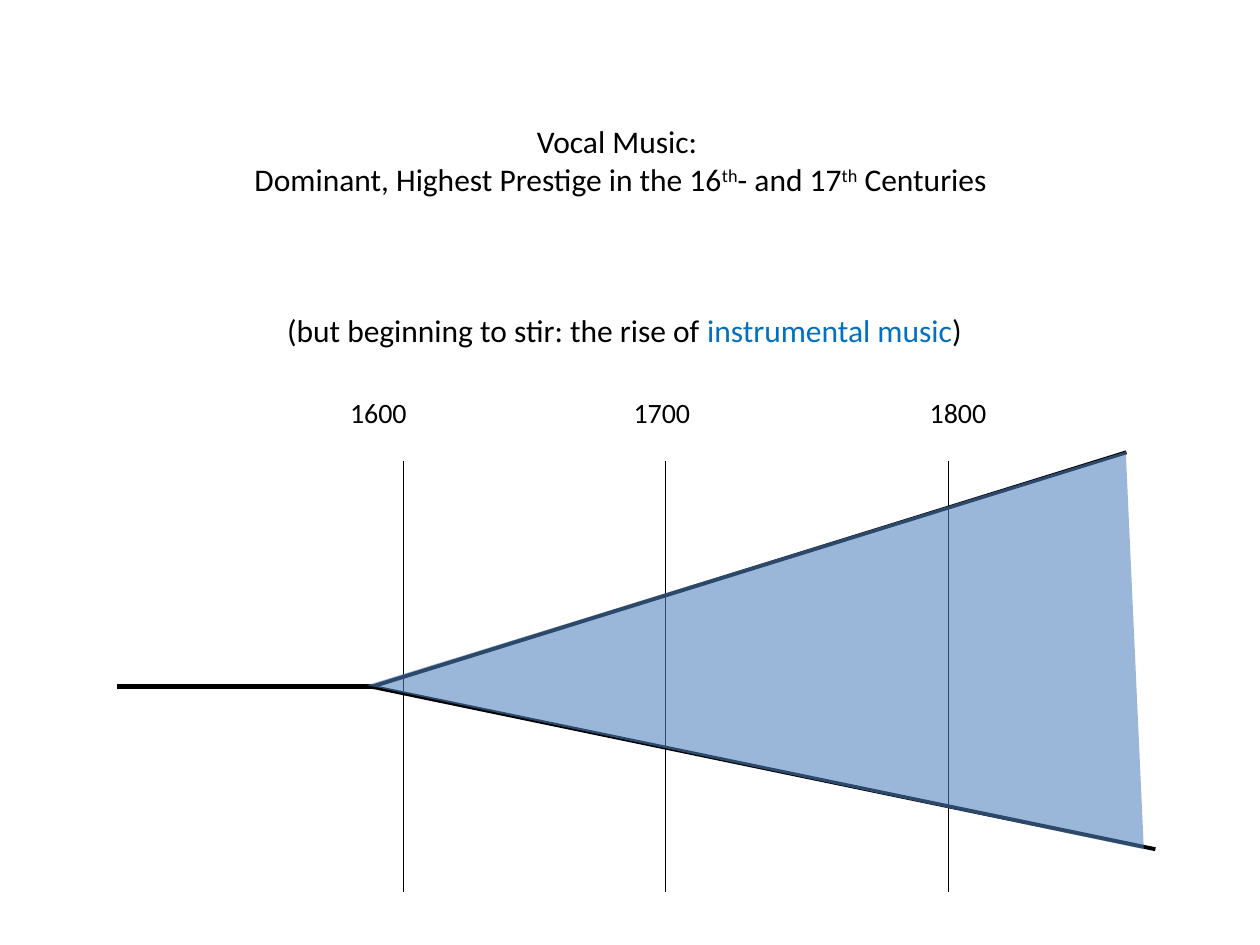
import pptx
import pptx.dml.color
import pptx.enum.shapes
import pptx.enum.text
import pptx.oxml
import pptx.oxml.ns
import pptx.util

Inches = pptx.util.Inches
BLACK = pptx.dml.color.RGBColor(0x00, 0x00, 0x00)
BLUE = pptx.dml.color.RGBColor(0x00, 0x70, 0xC0)
WEDGE_BLUE = pptx.dml.color.RGBColor(0x4F, 0x81, 0xBD)
DRAWING_NS = pptx.oxml.ns.nsdecls("a")

CENTURY_LINES = (3.2, 5.28, 7.53)
CENTURY_TOP, CENTURY_BOTTOM = 3.66, 7.08
LABEL_STOPS = (2.25, 4.6)
WEDGE_TIP = (2.95, 5.45)


def add_run(para, text, size, color=BLACK, superscript=False):
    run = para.add_run()
    run.text = text
    run.font.name = "Calibri"
    run.font.size = pptx.util.Pt(size)
    run.font.color.rgb = color
    if superscript:
        run._r.get_or_add_rPr().set("baseline", "30000")


def add_text_box(page, left, top, width, height):
    """Add a wrapping text box and return its first paragraph."""
    box = page.shapes.add_textbox(
        Inches(left), Inches(top), Inches(width), Inches(height))
    box.text_frame.word_wrap = True
    return box.text_frame.paragraphs[0]


def add_line(page, start, end, weight):
    line = page.shapes.add_connector(
        pptx.enum.shapes.MSO_CONNECTOR.STRAIGHT,
        *(Inches(value) for value in (*start, *end)))
    line.line.color.rgb = BLACK
    line.line.width = pptx.util.Pt(weight)
    line._element.spPr.append(
        pptx.oxml.parse_xml(f"<a:effectLst {DRAWING_NS}/>"))


def set_tab_stops(para, stops):
    marks = "".join(
        f'<a:tab pos="{Inches(stop)}" algn="l"/>' for stop in stops)
    para._p.get_or_add_pPr().append(
        pptx.oxml.parse_xml(f"<a:tabLst {DRAWING_NS}>{marks}</a:tabLst>"))


def fill_title(page):
    title = page.shapes.title
    title.left, title.top = Inches(1.59), Inches(0.92)
    title.width, title.height = Inches(6.67), Inches(0.71)
    frame = title.text_frame
    frame.word_wrap = True
    frame.auto_size = pptx.enum.text.MSO_AUTO_SIZE.NONE
    frame.vertical_anchor = pptx.enum.text.MSO_ANCHOR.TOP
    first, second = frame.paragraphs[0], frame.add_paragraph()
    for para in (first, second):
        para.alignment = pptx.enum.text.PP_ALIGN.CENTER
    add_run(first, "Vocal Music: ", 18)
    for text, raised in (
            ("Dominant, Highest Prestige in the 16", False), ("th", True),
            ("- and 17", False), ("th", True), (" Centuries", False)):
        add_run(second, text, 18, superscript=raised)


def add_wedge(page):
    """Add the translucent triangle that widens to the right."""
    wedge = page.shapes.add_shape(
        pptx.enum.shapes.MSO_SHAPE.ISOSCELES_TRIANGLE,
        Inches(4.38), Inches(2.25), Inches(3.16), Inches(6.1))
    wedge.rotation = 267.4
    wedge.shadow.inherit = False
    wedge.fill.solid()
    wedge.fill.fore_color.rgb = WEDGE_BLUE
    wedge.line.fill.background()
    color = wedge._element.spPr.find(".//" + pptx.oxml.ns.qn("a:srgbClr"))
    color.append(
        pptx.oxml.parse_xml(f'<a:alpha {DRAWING_NS} val="57000"/>'))


def main():
    deck = pptx.Presentation()
    deck.slide_width, deck.slide_height = Inches(10), Inches(7.5)
    page = deck.slides.add_slide(deck.slide_layouts.get_by_name("Title Only"))
    fill_title(page)

    subtitle = add_text_box(page, 2.18, 2.42, 6.05, 0.4)
    add_run(subtitle, "(but beginning to stir: the rise of ", 18)
    add_run(subtitle, "instrumental music", 18, BLUE)
    add_run(subtitle, ")", 18)

    years = add_text_box(page, 2.68, 3.09, 5.77, 0.37)
    set_tab_stops(years, LABEL_STOPS)
    add_run(years, "1600\t1700\t1800", 16)

    for x in CENTURY_LINES:
        add_line(page, (x, CENTURY_TOP), (x, CENTURY_BOTTOM), 0.75)
    add_line(page, (0.93, 5.45), WEDGE_TIP, 3)
    for end in ((8.94, 3.59), (9.17, 6.74)):
        add_line(page, WEDGE_TIP, end, 2.25)
    add_wedge(page)

    deck.save("out.pptx")


if __name__ == "__main__":
    main()
